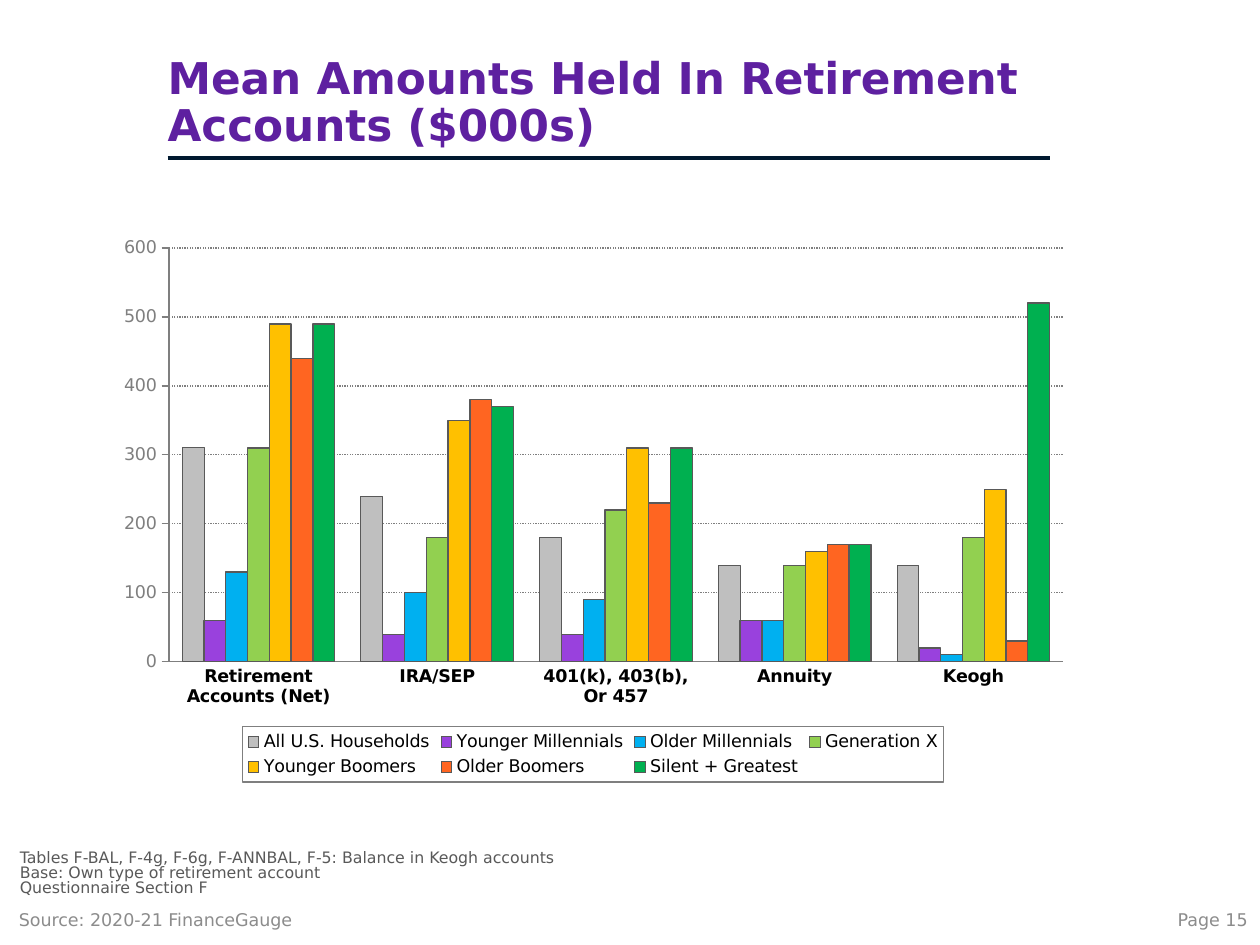
from dataclasses import dataclass

from lxml import etree
from pptx import Presentation
from pptx.chart.data import CategoryChartData
from pptx.dml.color import RGBColor
from pptx.enum.chart import XL_CHART_TYPE, XL_LEGEND_POSITION, XL_TICK_MARK
from pptx.enum.dml import MSO_LINE
from pptx.enum.shapes import MSO_CONNECTOR
from pptx.enum.text import MSO_ANCHOR, PP_ALIGN
from pptx.oxml import parse_xml
from pptx.oxml.ns import nsdecls, qn
from pptx.util import Cm, Pt

COLUMN = XL_CHART_TYPE.COLUMN_CLUSTERED
LEGEND_BOTTOM = XL_LEGEND_POSITION.BOTTOM
TICK_NONE, TICK_OUT = XL_TICK_MARK.NONE, XL_TICK_MARK.OUTSIDE
DOTTED = MSO_LINE.ROUND_DOT
MIDDLE, BOTTOM = MSO_ANCHOR.MIDDLE, MSO_ANCHOR.BOTTOM
LEFT, RIGHT = PP_ALIGN.LEFT, PP_ALIGN.RIGHT

FONT = "DejaVu Sans"
COLORS = {
    "title": "5E20A0", "rule": "00192F", "footer": "8C8C8C", "note": "595959",
    "text": "000000", "axis": "7F7F7F", "outline": "595959",
}


@dataclass
class TextBlock:
    box: tuple[float, float, float, float]  # left, top, width, height in cm
    lines: list[str]
    size: float
    color: str
    bold: bool = False
    anchor: MSO_ANCHOR = MIDDLE
    align: PP_ALIGN = LEFT
    spacing: float = 1.0
    insets: tuple[float, float] = (0.25, 0.13)  # horizontal, vertical in cm


@dataclass
class Generation:
    name: str
    values: list[int]
    color: str
    outline: float = 0.75


TEXTS = [
    TextBlock((3.38, 1.02, 17.78, 2.16),
              ["Mean Amounts Held In Retirement Accounts ($000s)"], 25, "title",
              bold=True, anchor=BOTTOM, spacing=0.9, insets=(0, 0.13)),
    TextBlock((0.13, 18.03, 8.46, 1.02), ["Source: 2020-21 FinanceGauge"],
              10, "footer"),
    TextBlock((0.4, 17.17, 24.66, 0.91),
              ["Tables F-BAL, F-4g, F-6g, F-ANNBAL, F-5: Balance in Keogh accounts",
               "Base: Own type of retirement account",
               "Questionnaire Section F"], 9, "note",
              anchor=BOTTOM, spacing=0.8, insets=(0, 0)),
    TextBlock((19.69, 18.03, 5.71, 1.02), ["Page 15"], 10, "footer", align=RIGHT),
]

ACCOUNTS = ["Retirement Accounts (Net)", "IRA/SEP", "401(k), 403(b), Or 457",
            "Annuity", "Keogh"]
GENERATIONS = [
    Generation("All U.S. Households", [310, 240, 180, 140, 140], "BFBFBF", 0.5),
    Generation("Younger Millennials", [60, 40, 40, 60, 20], "9941DD"),
    Generation("Older Millennials", [130, 100, 90, 60, 10], "00B0F0"),
    Generation("Generation X", [310, 180, 220, 140, 180], "92D050"),
    Generation("Younger Boomers", [490, 350, 310, 160, 250], "FFC000"),
    Generation("Older Boomers", [440, 380, 230, 170, 30], "FF6521"),
    Generation("Silent + Greatest", [490, 370, 310, 170, 520], "00B050"),
]


def set_font(font, size: float, color: str, bold: bool = False) -> None:
    formats = {"name": FONT, "size": Pt(size), "bold": bold}
    for name, value in formats.items():
        setattr(font, name, value)
    font.color.rgb = RGBColor.from_string(COLORS[color])


def set_line(line, color: str, width: float) -> None:
    line.color.rgb = RGBColor.from_string(color)
    line.width = Pt(width)


def add_text(s, block: TextBlock) -> None:
    tf = s.shapes.add_textbox(*map(Cm, block.box)).text_frame
    across, down = map(Cm, block.insets)
    formats = {"word_wrap": True, "vertical_anchor": block.anchor,
               "margin_left": across, "margin_right": across,
               "margin_top": down, "margin_bottom": down}
    for name, value in formats.items():
        setattr(tf, name, value)
    for i, line in enumerate(block.lines):
        p = tf.add_paragraph() if i else tf.paragraphs[0]
        p.alignment = block.align
        p.line_spacing = block.spacing
        r = p.add_run()
        r.text = line
        set_font(r.font, block.size, block.color, block.bold)


def add_rule(s) -> None:
    rule = s.shapes.add_connector(MSO_CONNECTOR.STRAIGHT,
                                  Cm(3.38), Cm(3.18), Cm(21.16), Cm(3.18))
    set_line(rule.line, COLORS["rule"], 2)
    etree.SubElement(rule._element.spPr, qn("a:effectLst"))


def place(element, index: int, box: tuple[float, float, float, float],
          target: str = "") -> None:
    """Fix a chart part at fractions of the chart's size."""
    for old in element.findall(qn("c:layout")):
        element.remove(old)
    parts = f'<c:layoutTarget val="{target}"/>' if target else ""
    parts += '<c:xMode val="edge"/><c:yMode val="edge"/>'
    parts += "".join(f'<c:{k} val="{v}"/>' for k, v in zip("xywh", box))
    element.insert(index, parse_xml(
        f'<c:layout {nsdecls("c")}><c:manualLayout>{parts}'
        "</c:manualLayout></c:layout>"))


def add_balance_chart(s) -> None:
    data = CategoryChartData(number_format="#,##0")
    data.categories = ACCOUNTS
    for g in GENERATIONS:
        data.add_series(g.name, g.values)
    chart = s.shapes.add_chart(COLUMN, Cm(2.11), Cm(4.6), Cm(19.69), Cm(11.18),
                               data).chart
    chart.has_title = False
    set_font(chart.font, 10, "text")

    # Columns
    plot = chart.plots[0]
    plot.gap_width, plot.overlap, plot.vary_by_categories = 120, 0, False
    for series, g in zip(plot.series, GENERATIONS):
        series.format.fill.solid()
        series.format.fill.fore_color.rgb = RGBColor.from_string(g.color)
        set_line(series.format.line, COLORS["outline"], g.outline)

    # Axes and gridlines
    cat, val = chart.category_axis, chart.value_axis
    for axis, tick, color, bold in ((cat, TICK_NONE, "text", True),
                                    (val, TICK_OUT, "axis", False)):
        axis.major_tick_mark, axis.minor_tick_mark = tick, TICK_NONE
        set_font(axis.tick_labels.font, 10, color, bold)
        set_line(axis.format.line, COLORS["axis"], 0.75)
    val.minimum_scale, val.maximum_scale, val.major_unit = 0, 600, 100
    val.tick_labels.number_format = "#,##0"
    val.tick_labels.number_format_is_linked = False
    val.has_major_gridlines = True
    grid = val.major_gridlines.format.line
    set_line(grid, COLORS["axis"], 0.75)
    grid.dash_style = DOTTED

    # Legend with a thin frame
    chart.has_legend = True
    legend = chart.legend
    legend.position, legend.include_in_layout = LEGEND_BOTTOM, False
    set_font(legend.font, 10, "text")
    legend._element.find(qn("c:txPr")).addprevious(parse_xml(
        f'<c:spPr {nsdecls("c", "a")}><a:ln w="{Pt(0.75)}"><a:solidFill>'
        f'<a:srgbClr val="{COLORS["axis"]}"/></a:solidFill></a:ln></c:spPr>'))

    place(chart._chartSpace.chart.plotArea, 0, (0.066, 0.036, 0.915, 0.747), "inner")
    place(legend._element, 1, (0.141, 0.9, 0.718, 0.1))


def main() -> None:
    prs = Presentation()
    prs.slide_width, prs.slide_height = Cm(25.4), Cm(19.05)
    s = prs.slides.add_slide(prs.slide_layouts[6])
    add_rule(s)
    for block in TEXTS:
        add_text(s, block)
    add_balance_chart(s)
    prs.save("out.pptx")


if __name__ == "__main__":
    main()
